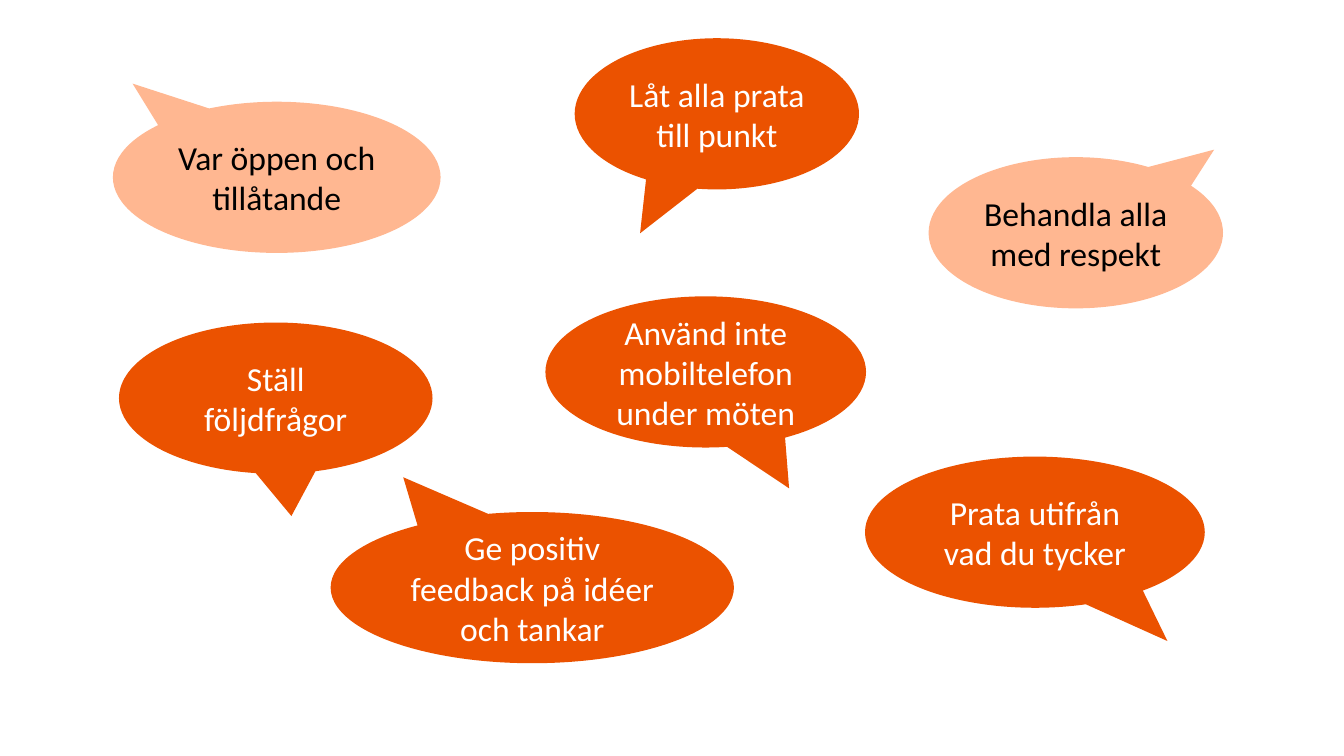
from pptx import Presentation
from pptx.dml.color import RGBColor
from pptx.enum.shapes import MSO_SHAPE
from pptx.enum.text import MSO_ANCHOR, PP_ALIGN
from pptx.util import Inches, Pt

BUBBLE = MSO_SHAPE.OVAL_CALLOUT
MIDDLE = MSO_ANCHOR.MIDDLE
CENTER = PP_ALIGN.CENTER

BUBBLE_HEIGHT = 1.5
STRONG = ("EB5200", "FFFFFF")
SOFT = ("FFB791", "000000")

MEETING_RULES = [
    ("Låt alla prata till punkt", 5.7, 0.38, 2.82, (-0.27, 0.79), STRONG),
    ("Ställ följdfrågor", 1.18, 3.2, 3.11, (0.05, 0.78), STRONG),
    ("Använd inte mobiltelefon under möten", 5.41, 2.94, 3.18, (0.26, 0.77), STRONG),
    ("Var öppen och tillåtande", 1.12, 1.01, 3.25, (-0.44, -0.62), SOFT),
    ("Prata utifrån vad du tycker", 8.58, 4.53, 3.37, (0.39, 0.72), STRONG),
    ("Ge positiv feedback på idéer och tankar", 3.28, 5.08, 4, (-0.32, -0.73), STRONG),
    ("Behandla alla med respekt", 9.21, 1.56, 2.92, (0.47, -0.55), SOFT),
]


def color(hex_value):
    return RGBColor.from_string(hex_value)


def add_bubble(s, text, left, top, width, tip, style):
    fill, ink = style
    sp = s.shapes.add_shape(
        BUBBLE, Inches(left), Inches(top), Inches(width), Inches(BUBBLE_HEIGHT)
    )
    sp.adjustments[0], sp.adjustments[1] = tip
    sp.shadow.inherit = False
    sp.fill.solid()
    sp.fill.fore_color.rgb = color(fill)
    sp.line.fill.background()
    tf = sp.text_frame
    tf.word_wrap = True
    tf.vertical_anchor = MIDDLE
    p = tf.paragraphs[0]
    p.text = text
    p.alignment = CENTER
    p.font.name = "Calibri"
    p.font.size = Pt(24)
    p.font.color.rgb = color(ink)


def main():
    prs = Presentation()
    prs.slide_width = Inches(13.33)
    prs.slide_height = Inches(7.5)
    s = prs.slides.add_slide(prs.slide_layouts[6])
    for rule in MEETING_RULES:
        add_bubble(s, *rule)
    prs.save("out.pptx")


if __name__ == "__main__":
    main()
